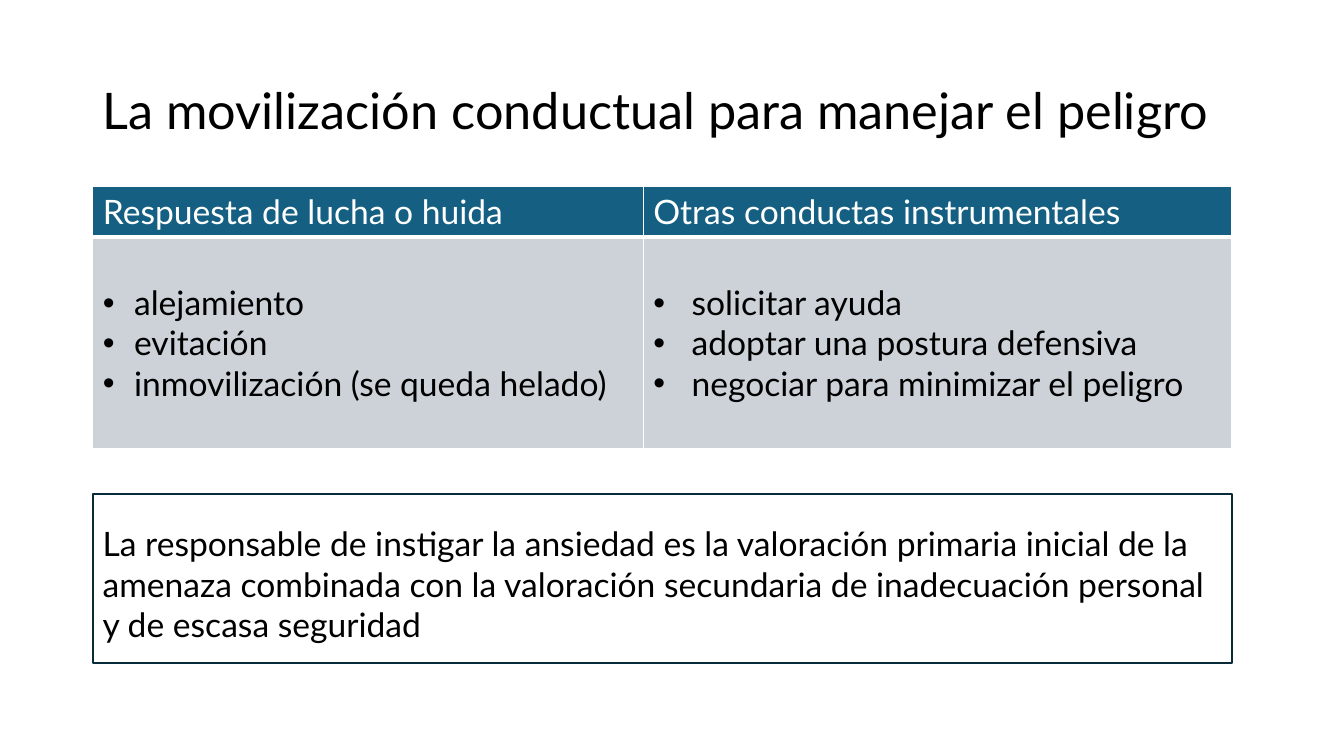
from dataclasses import dataclass

from pptx import Presentation
from pptx.dml.color import RGBColor
from pptx.enum.shapes import MSO_SHAPE as Shape
from pptx.enum.text import MSO_ANCHOR as Anchor, PP_ALIGN as Align
from pptx.oxml.ns import qn
from pptx.util import Emu, Pt
from lxml.etree import SubElement, Element

EMU_PER_PX = 9144  # 100 px to the inch


def px(length):
    return Emu(length * EMU_PER_PX)


@dataclass(frozen=True)
class Theme:
    font: str = "Lato"
    ink: str = "000000"
    paper: str = "FFFFFF"
    header: str = "156082"
    body: str = "CCD2D8"
    outline: str = "092A39"
    title_size: int = 36
    text_size: int = 24
    thin: int = 1
    thick: int = 3


class SlideBuilder:
    def __init__(self, page, theme):
        self.page = page
        self.theme = theme

    def add_text(self, frame, lines, size, color, indent=0, **formats):
        """Fill a text frame with one paragraph per line, bulleted if indented."""
        frame.word_wrap = True
        for index, line in enumerate(lines):
            para = frame.paragraphs[0] if index == 0 else frame.add_paragraph()
            for name, value in formats.items():
                setattr(para, name, value)
            if indent:
                self.add_bullet(para, indent)
            span = para.add_run()
            span.text = line
            for name, value in {"name": self.theme.font, "size": Pt(size)}.items():
                setattr(span.font, name, value)
            span.font.color.rgb = RGBColor.from_string(color)

    def add_bullet(self, para, indent):
        props = para._p.get_or_add_pPr()
        props.set("marL", str(px(indent)))
        props.set("indent", str(-px(indent)))
        SubElement(props, qn("a:buFont")).set("typeface", "Arial")
        SubElement(props, qn("a:buChar")).set("char", "•")

    def add_title(self, text, *area):
        frame = self.page.shapes.add_textbox(*map(px, area)).text_frame
        frame.vertical_anchor = Anchor.MIDDLE
        self.add_text(frame, [text], self.theme.title_size, self.theme.ink, line_spacing=0.9)

    def add_box(self, text, *area):
        box = self.page.shapes.add_shape(Shape.RECTANGLE, *map(px, area))
        box.shadow.inherit = False
        box.fill.background()
        box.line.color.rgb = RGBColor.from_string(self.theme.outline)
        box.line.width = Pt(1.5)
        frame = box.text_frame
        for name, value in {"vertical_anchor": Anchor.MIDDLE, "margin_top": px(15)}.items():
            setattr(frame, name, value)
        self.add_text(frame, [text], self.theme.text_size, self.theme.ink, alignment=Align.LEFT)

    def add_table(self, left, top, widths, heights, columns):
        """Draw columns given as (heading, bullet lines, bullet indent)."""
        theme = self.theme
        table = self.page.shapes.add_table(
            len(heights), len(widths), px(left), px(top),
            px(sum(widths)), px(sum(heights))).table
        for row, height in zip(table.rows, heights):
            row.height = px(height)
        for index, (width, (heading, lines, indent)) in enumerate(zip(widths, columns)):
            table.columns[index].width = px(width)
            head, body = table.cell(0, index), table.cell(1, index)
            self.style_cell(head, theme.header, top=theme.thin, bottom=theme.thick)
            self.style_cell(body, theme.body, top=theme.thick, bottom=theme.thin)
            self.add_text(head.text_frame, [heading], theme.text_size, theme.paper, font_bold=False)
            self.add_text(body.text_frame, lines, theme.text_size, theme.ink, indent)
            body.vertical_anchor = Anchor.MIDDLE
        table.first_row = False

    def style_cell(self, cell, color, top, bottom):
        cell.fill.solid()
        cell.fill.fore_color.rgb = RGBColor.from_string(color)
        props = cell._tc.get_or_add_tcPr()
        borders = {"lnL": self.theme.thin, "lnR": self.theme.thin, "lnT": top, "lnB": bottom}
        for position, (side, width) in enumerate(borders.items()):
            border = Element(qn(f"a:{side}"), w=str(Pt(width)))
            fill = SubElement(border, qn("a:solidFill"))
            SubElement(fill, qn("a:srgbClr")).set("val", self.theme.paper)
            props.insert(position, border)


def main():
    deck = Presentation()
    deck.slide_width, deck.slide_height = px(1333), px(750)
    slide = SlideBuilder(deck.slides.add_slide(deck.slide_layouts[6]), Theme())

    slide.add_title("La movilización conductual para manejar el peligro", 92, 40, 1150, 145)
    slide.add_table(92, 185, widths=[546, 584], heights=[50, 210], columns=[
        ("Respuesta de lucha o huida",
         ["alejamiento", "evitación", "inmovilización (se queda helado)"], 31),
        ("Otras conductas instrumentales",
         ["solicitar ayuda", "adoptar una postura defensiva",
          "negociar para minimizar el peligro"], 38),
    ])
    slide.add_box(
        "La responsable de instigar la ansiedad es la valoración primaria inicial de la "
        "amenaza combinada con la valoración secundaria de inadecuación personal "
        "y de escasa seguridad", 92, 490, 1130, 168)
    deck.save("out.pptx")


if __name__ == "__main__":
    main()
